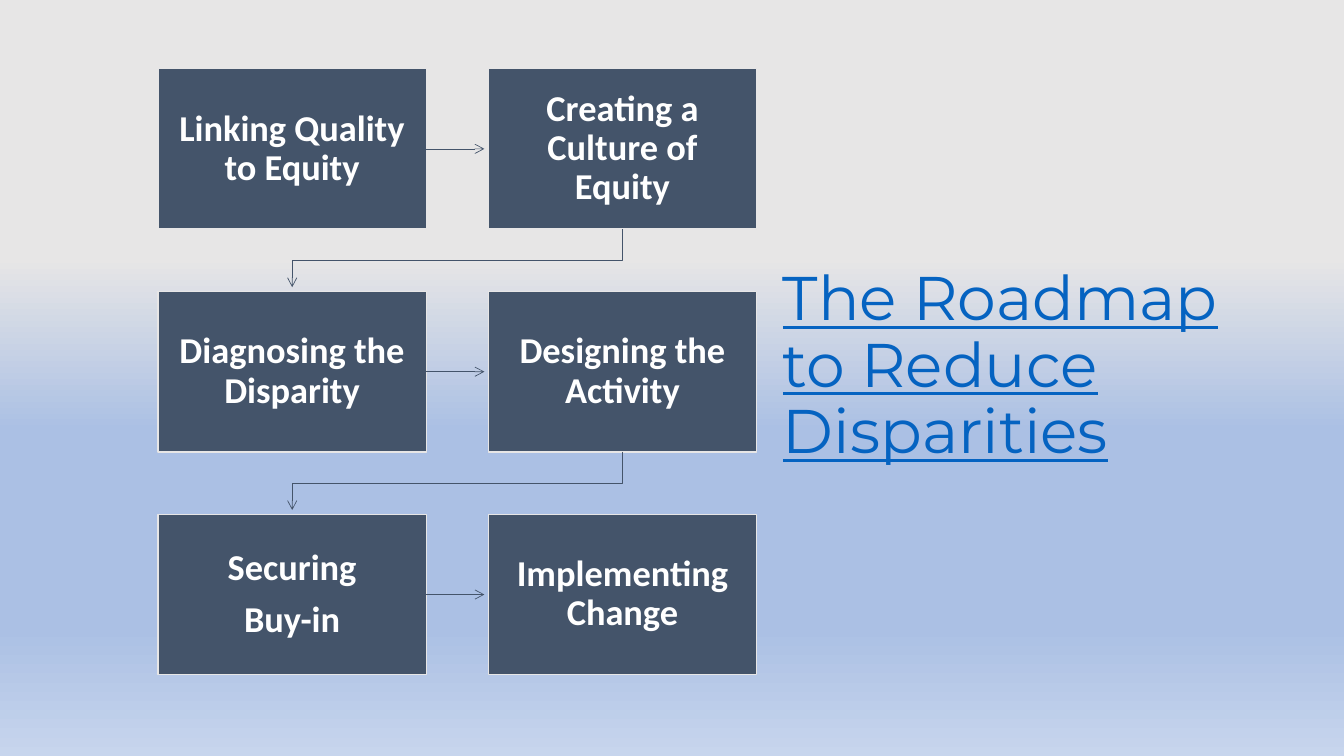
from copy import deepcopy
from dataclasses import dataclass

from lxml.etree import SubElement
from pptx import Presentation
from pptx.dml.color import RGBColor as RGB
from pptx.enum.shapes import MSO_CONNECTOR as CONN, MSO_SHAPE as SHAPE
from pptx.enum.text import MSO_ANCHOR as ANCHOR, MSO_AUTO_SIZE as FIT, PP_ALIGN as ALIGN
from pptx.oxml.ns import qn
from pptx.util import Pt


@dataclass(frozen=True)
class Theme:
    """Colours, fonts and type sizes of the slide."""
    navy: RGB = RGB.from_string("44546A")
    pale: RGB = RGB.from_string("E7E6E6")
    white: RGB = RGB.from_string("FFFFFF")
    blue: RGB = RGB.from_string("0563C1")
    backdrop: tuple = ((0.34, "E7E6E6"), (0.57, "ABC0E4"), (0.83, "ABC0E4"), (1, "C7D5ED"))
    title_font: str = "Montserrat"
    step_font: str = "Calibri"
    title_size: int = 44
    step_size: int = 26


THEME = Theme()
STEPS = [
    ["Linking Quality to Equity", "Creating a Culture of Equity"],
    ["Diagnosing the Disparity", "Designing the Activity"],
    ["Securing\nBuy-in", "Implementing Change"],
]


def paint_background(slide):
    """Fill the slide with the vertical gradient."""
    fill = slide.background.fill
    fill.gradient()
    fill.gradient_angle = 270
    stops = slide.background._cSld.find(".//" + qn("a:gsLst"))
    for _ in range(len(THEME.backdrop) - len(stops)):
        stops.append(deepcopy(stops[0]))
    for stop, (position, color) in zip(fill.gradient_stops, THEME.backdrop):
        stop.position = position
        stop.color.rgb = RGB.from_string(color)


def format_text(tf, font, size, color, align, bold=False, underline=False):
    """Give every run of a text frame the same look."""
    tf.word_wrap = True
    tf.auto_size = FIT.NONE
    tf.vertical_anchor = ANCHOR.MIDDLE
    for p in tf.paragraphs:
        p.alignment = align
        p.line_spacing = 0.9
        for r in p.runs:
            r.font.name, r.font.size = font, Pt(size)
            r.font.bold, r.font.underline = bold, underline
            r.font.color.rgb = color


def add_title(slide, text, left, top, width, height):
    """Place the underlined title in its box."""
    sp = slide.shapes.title
    sp.left, sp.top, sp.width, sp.height = map(Pt, (left, top, width, height))
    sp.text_frame.text = text
    format_text(sp.text_frame, THEME.title_font, THEME.title_size, THEME.blue,
                ALIGN.LEFT, underline=True)


def add_step(slide, text, left, top, width, height):
    """Draw one step of the roadmap."""
    sp = slide.shapes.add_shape(SHAPE.RECTANGLE, *map(Pt, (left, top, width, height)))
    sp.shadow.inherit = False
    sp.fill.solid()
    sp.fill.fore_color.rgb = THEME.navy
    sp.line.color.rgb = THEME.pale
    sp.line.width = Pt(1)
    tf = sp.text_frame
    tf.margin_left = tf.margin_right = tf.margin_top = tf.margin_bottom = Pt(14)
    tf.text = text
    format_text(tf, THEME.step_font, THEME.step_size, THEME.white, ALIGN.CENTER, bold=True)
    for p in tf.paragraphs:
        p.space_after = Pt(9)


def style_arrow(sp):
    """Give a line its thin stroke and open arrowhead."""
    sp.line.color.rgb = THEME.navy
    sp.line.width = Pt(0.5)
    SubElement(sp._element.spPr.find(qn("a:ln")), qn("a:tailEnd"), type="arrow")


def add_straight_arrow(slide, x1, x2, y):
    """Point from a step to the next one in its row."""
    line = slide.shapes.add_connector(CONN.STRAIGHT, Pt(x1), Pt(y), Pt(x2), Pt(y))
    style_arrow(line)
    SubElement(line._element.spPr, qn("a:effectLst"))


def add_bent_arrow(slide, x1, y1, x2, y2, bend):
    """Point from the end of a row to the start of the next row."""
    outline = slide.shapes.build_freeform(Pt(x1), Pt(y1))
    corners = [(x1, bend), (x2, bend), (x2, y2)]
    outline.add_line_segments([(Pt(x), Pt(y)) for x, y in corners], close=False)
    sp = outline.convert_to_shape()
    sp.shadow.inherit = False
    sp.fill.background()
    style_arrow(sp)


def add_roadmap(slide, left, top, width, height, gap=44.5, clearance=3):
    """Lay the steps out in a grid and join them in reading order."""
    rows, cols = len(STEPS), len(STEPS[0])
    w = (width - gap * (cols - 1)) / cols
    h = (height - gap * (rows - 1)) / rows
    for i, row in enumerate(STEPS):
        y = top + i * (h + gap)
        for j, text in enumerate(row):
            x = left + j * (w + gap)
            add_step(slide, text, x, y, w, h)
            if j < cols - 1:
                add_straight_arrow(slide, x + w, x + w + gap - clearance, y + h / 2)
            elif i < rows - 1:
                add_bent_arrow(slide, x + w / 2, y + h, left + w / 2,
                               y + h + gap - clearance, y + h + gap / 2)


def main():
    """Build and save the slide."""
    prs = Presentation()
    prs.slide_width, prs.slide_height = Pt(960), Pt(540)
    slide = prs.slides.add_slide(prs.slide_layouts[5])
    paint_background(slide)
    add_title(slide, "The Roadmap to Reduce Disparities", 552, 43, 342, 439)
    add_roadmap(slide, 113, 49, 427.5, 433)
    prs.save("out.pptx")


if __name__ == "__main__":
    main()
